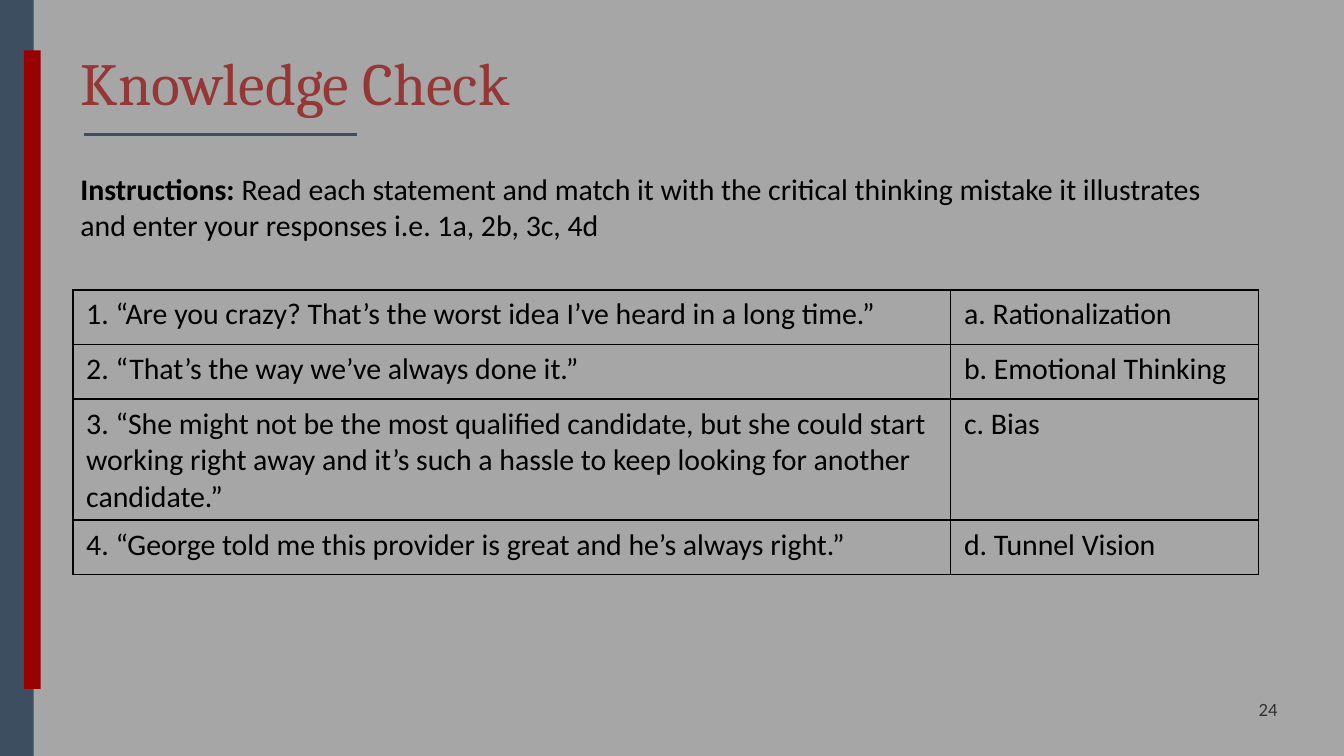
"""Build the Knowledge Check slide."""
from dataclasses import dataclass

from lxml import etree
from pptx import Presentation
from pptx.dml.color import RGBColor
from pptx.enum.shapes import MSO_SHAPE
from pptx.enum.text import MSO_ANCHOR, PP_ALIGN
from pptx.oxml.ns import qn
from pptx.util import Pt

RECT = MSO_SHAPE.RECTANGLE
LEFT, RIGHT = PP_ALIGN.LEFT, PP_ALIGN.RIGHT
TOP, MIDDLE = MSO_ANCHOR.TOP, MSO_ANCHOR.MIDDLE
SCALE = 9525

PAIRS = [
    ("1. “Are you crazy? That’s the worst idea I’ve heard in a long time.”",
     "a. Rationalization"),
    ("2. “That’s the way we’ve always done it.”", "b. Emotional Thinking"),
    ("3. “She might not be the most qualified candidate, but she could start "
     "working right away and it’s such a hassle to keep looking for another "
     "candidate.”", "c. Bias"),
    ("4. “George told me this provider is great and he’s always right.”",
     "d. Tunnel Vision"),
]


@dataclass(frozen=True)
class Theme:
    """Colours, fonts and type sizes."""
    back: str = "A6A6A6"
    slate: str = "3E4E61"
    red: str = "990000"
    title: str = "953735"
    ink: str = "000000"
    grey: str = "333333"
    head: str = "Cambria"
    body: str = "Calibri"
    big: int = 32
    mid: int = 16
    small: int = 10


def px(*sizes):
    """Turn px into EMU."""
    return [size * SCALE for size in sizes]


def rgb(code):
    """Turn a hex code into a colour."""
    return RGBColor.from_string(code)


def write(frame, *parts, font, size, color, align=LEFT, anchor=TOP):
    """Fill a frame with one paragraph of (text, bold) parts."""
    frame.word_wrap = True
    frame.vertical_anchor = anchor
    para = frame.paragraphs[0]
    para.alignment = align
    for text, bold in parts:
        run = para.add_run()
        run.text = text
        run.font.name = font
        run.font.size = Pt(size)
        run.font.bold = bold
        run.font.color.rgb = rgb(color)


class Deck:
    """Holds the theme and the current slide."""

    def __init__(self, theme):
        """Open a deck with one title-only slide."""
        self.theme = theme
        self.file = Presentation()
        self.file.slide_width, self.file.slide_height = px(960, 540)
        self.slide = self.file.slides.add_slide(self.file.slide_layouts[5])
        fill = self.slide.background.fill
        fill.solid()
        fill.fore_color.rgb = rgb(theme.back)

    def bar(self, box, color):
        """Add a plain filled bar."""
        shape = self.slide.shapes.add_shape(RECT, *px(*box))
        shape.shadow.inherit = False
        shape.fill.solid()
        shape.fill.fore_color.rgb = rgb(color)
        shape.line.fill.background()

    def title(self, box, text):
        """Place and fill the title."""
        shape = self.slide.shapes.title
        shape.left, shape.top, shape.width, shape.height = px(*box)
        write(shape.text_frame, (text, False), font=self.theme.head,
              size=self.theme.big, color=self.theme.title, anchor=MIDDLE)

    def text(self, box, *parts, **style):
        """Add a text box."""
        shape = self.slide.shapes.add_textbox(*px(*box))
        write(shape.text_frame, *parts, font=self.theme.body, **style)

    def edge(self, cell):
        """Draw a thin line on each side of a cell."""
        props = cell._tc.get_or_add_tcPr()
        for side in ("a:lnL", "a:lnR", "a:lnT", "a:lnB"):
            line = etree.SubElement(props, qn(side), w=str(Pt(1)))
            fill = etree.SubElement(line, qn("a:solidFill"))
            etree.SubElement(fill, qn("a:srgbClr"), val=self.theme.ink)

    def table(self, spot, cols, high, rows):
        """Add a ruled table without fills."""
        frame = self.slide.shapes.add_table(
            len(rows), len(cols), *px(*spot, sum(cols), high * len(rows)))
        grid = frame.table
        grid.first_row = grid.horz_banding = False
        for col, wide in zip(grid.columns, px(*cols)):
            col.width = wide
        for row, texts in zip(grid.rows, rows):
            row.height = px(high)[0]
            for cell, text in zip(row.cells, texts):
                self.edge(cell)
                cell.fill.background()
                write(cell.text_frame, (text, False), font=self.theme.body,
                      size=self.theme.mid, color=self.theme.ink)


def main():
    """Build and save the slide."""
    theme = Theme()
    deck = Deck(theme)
    deck.bar((60, 95, 195, 2), theme.slate)
    deck.bar((0, 0, 24, 540), theme.slate)
    deck.bar((17, 36, 12, 456), theme.red)
    deck.title((48, 22, 864, 72), "Knowledge Check")
    deck.text((847, 492, 75, 29), ("24", False), size=theme.small,
              color=theme.grey, align=RIGHT, anchor=MIDDLE)
    deck.table((52, 207), (627, 220), 39, PAIRS)
    deck.text((48, 117, 840, 61), ("Instructions: ", True),
              ("Read each statement and match it with the critical thinking "
               "mistake it illustrates and enter your responses i.e. "
               "1a, 2b, 3c, 4d", False), size=theme.mid, color=theme.ink)
    deck.file.save("out.pptx")


if __name__ == "__main__":
    main()
